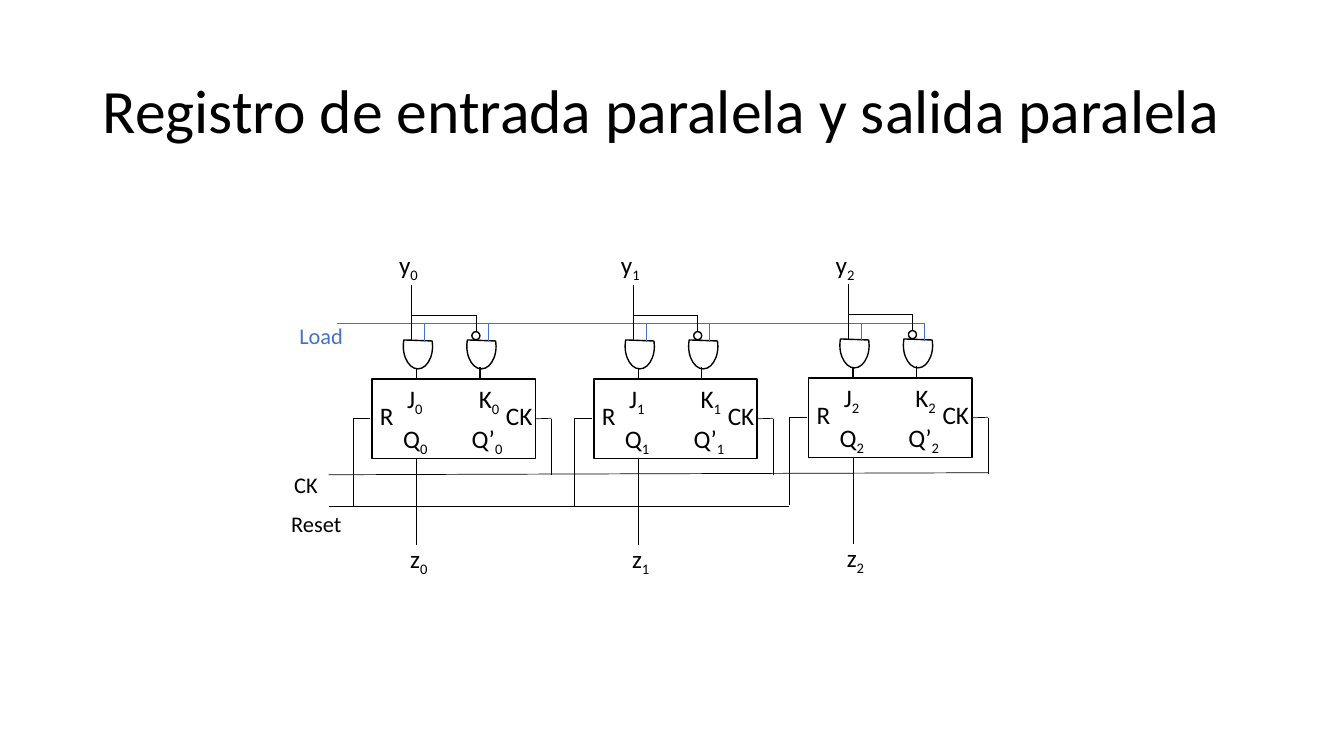
import pptx
import pptx.dml.color
import pptx.enum.shapes
import pptx.enum.text
import pptx.oxml.ns
import pptx.util
import lxml.etree

Inches = pptx.util.Inches
Pt = pptx.util.Pt
MSO_SHAPE = pptx.enum.shapes.MSO_SHAPE
RGBColor = pptx.dml.color.RGBColor

BLACK = RGBColor(0x00, 0x00, 0x00)
WHITE = RGBColor(0xFF, 0xFF, 0xFF)
BLUE = RGBColor(0x44, 0x72, 0xC4)


class Diagram:
    font = "Calibri"
    thin = 0.5
    thick = 1

    def __init__(self, slide):
        self.slide = slide

    def style(self, p, size, color):
        p.font.name = self.font
        p.font.size = Pt(size)
        p.font.color.rgb = color

    def title(self, text, x, y, w, h):
        sp = self.slide.shapes.title
        sp.left, sp.top, sp.width, sp.height = map(Inches, (x, y, w, h))
        tf = sp.text_frame
        tf.text = text
        tf.vertical_anchor = pptx.enum.text.MSO_ANCHOR.MIDDLE
        p = tf.paragraphs[0]
        p.alignment = pptx.enum.text.PP_ALIGN.LEFT
        p.line_spacing = 0.9
        self.style(p, 44, BLACK)

    def label(self, text, x, y, w=0.51, h=0.4, sub="", size=18, color=BLACK):
        sp = self.slide.shapes.add_textbox(*map(Inches, (x, y, w, h)))
        tf = sp.text_frame
        tf.word_wrap = True
        tf.auto_size = pptx.enum.text.MSO_AUTO_SIZE.SHAPE_TO_FIT_TEXT
        p = tf.paragraphs[0]
        p.add_run().text = text
        if sub:
            r = p.add_run()
            r.text = sub
            r._r.get_or_add_rPr().set("baseline", "-25000")
        self.style(p, size, color)

    def shape(self, kind, x, y, w, h, fill=None):
        sp = self.slide.shapes.add_shape(kind, *map(Inches, (x, y, w, h)))
        sp.shadow.inherit = False
        if fill is None:
            sp.fill.background()
        else:
            sp.fill.solid()
            sp.fill.fore_color.rgb = fill
        sp.line.color.rgb = BLACK
        sp.line.width = Pt(self.thick)
        return sp

    def gate(self, x, y):
        sp = self.shape(MSO_SHAPE.CHORD, x, y, 0.29, 0.45)
        sp.adjustments[0] = 203.905
        sp.adjustments[1] = 122.418

    def wire(self, x1, y1, x2, y2, color=BLACK, width=thin):
        cn = self.slide.shapes.add_connector(
            pptx.enum.shapes.MSO_CONNECTOR.STRAIGHT, *map(Inches, (x1, y1, x2, y2)))
        cn.line.color.rgb = color
        cn.line.width = Pt(width)
        lxml.etree.SubElement(cn._element.spPr, pptx.oxml.ns.qn("a:effectLst"))
        return cn

    def flip_flop(self, n, x, y):
        box = self.shape(MSO_SHAPE.RECTANGLE, x, y, 1.62, 0.79, WHITE)
        for dx, dy in ((0.44, -0.1), (1.07, -0.12)):
            self.wire(x + dx, y + dy, x + dx, y, width=self.thick)
        for dx in (0.31, 0.94):
            self.gate(x + dx, y - 0.55)
            self.wire(x + dx + 0.21, y - 0.55, x + dx + 0.21, y - 0.37, BLUE)

        self.wire(x + 0.39, y - 0.93, x + 0.39, y - 0.39)
        self.wire(x + 0.39, y - 0.63, x + 1.03, y - 0.63)
        self.wire(x + 1.03, y - 0.63, x + 1.03, y - 0.47)
        self.shape(MSO_SHAPE.OVAL, x + 0.99, y - 0.47, 0.08, 0.08)

        for text, dx, dy, w in (("K", 0.96, -0.01, 0.51), ("J", 0.25, -0.01, 0.51),
                                ("Q", 0.21, 0.39, 0.51), ("Q’", 0.89, 0.39, 0.58),
                                ("z", 0.28, 1.58, 0.51)):
            self.label(text, x + dx, y + dy, w, sub=str(n))
        self.label("y", x + 0.17, 2.42, sub=str(n))
        self.label("R", x - 0.02, y + 0.16, 0.38)
        self.label("CK", x + 1.23, y + 0.16, 0.5)

        clock = self.wire(x + 1.62, y + 0.39, x + 1.78, y + 0.39)
        clock.begin_connect(box, 3)
        self.wire(x + 1.78, y + 0.4, x + 1.78, y + 0.95)
        self.wire(x - 0.19, y + 0.39, x - 0.02, y + 0.39)
        self.wire(x - 0.19, y + 0.39, x - 0.19, y + 1.26)
        self.wire(x + 0.44, y + 0.79, x + 0.44, y + 1.65)


def main():
    prs = pptx.Presentation()
    prs.slide_width = Inches(13.33)
    prs.slide_height = Inches(7.5)
    d = Diagram(prs.slides.add_slide(prs.slide_layouts[5]))

    d.title("Registro de entrada paralela y salida paralela", 0.92, 0.4, 11.5, 1.45)
    d.wire(3.34, 3.21, 9.17, 3.21, BLUE)
    for n, (x, y) in enumerate(((3.69, 3.76), (5.89, 3.76), (8.02, 3.75))):
        d.flip_flop(n, x, y)
    d.wire(9.8, 4.69, 3.26, 4.71)
    d.wire(7.83, 5.02, 3.26, 5.02)
    for text, x, y, color in (("Reset", 2.79, 5.01, BLACK), ("CK", 2.82, 4.62, BLACK),
                              ("Load", 2.87, 3.15, BLUE)):
        d.label(text, x, y, 0.9, 0.37, size=16, color=color)

    prs.save("out.pptx")


if __name__ == "__main__":
    main()
